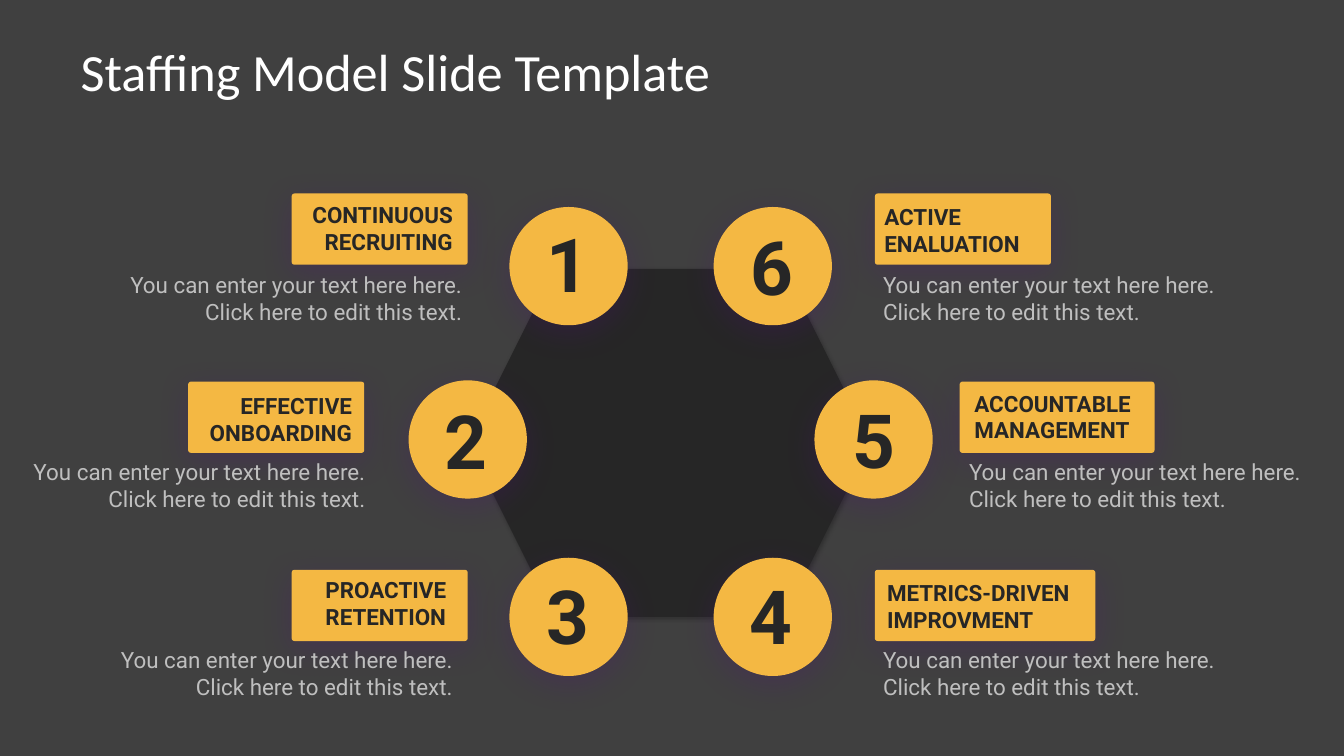
from lxml import etree
from pptx import Presentation
from pptx import util as u
from pptx.dml.color import RGBColor
from pptx.enum import shapes, text
from pptx.oxml.ns import qn

Inches = u.Inches
COLORS = {"background": "404040", "amber": "F4B843", "dark": "262626", "white": "FFFFFF",
          "grey": "BFBFBF", "glow": "550D7F", "black": "000000"}
LEFT, CENTER, RIGHT = text.PP_ALIGN.LEFT, text.PP_ALIGN.CENTER, text.PP_ALIGN.RIGHT
DETAIL = "You can enter your text here here. Click here to edit this text."

prs = Presentation()
prs.slide_width, prs.slide_height = Inches(10), Inches(10 * 9 / 16)
slide = prs.slides.add_slide(prs.slide_layouts[5])
slide.background.fill.solid()
slide.background.fill.fore_color.rgb = RGBColor.from_string(COLORS["background"])


def add_part(kind, box, color, glow, blur, distance, angle):
    part = slide.shapes.add_shape(kind, *[Inches(v) for v in box])
    part.fill.solid()
    part.fill.fore_color.rgb = RGBColor.from_string(COLORS[color])
    part.line.fill.background()
    part.shadow.inherit = False
    effects = part._element.spPr.find(qn("a:effectLst"))
    shadow = etree.SubElement(effects, qn("a:outerShdw"), blurRad=str(u.Pt(blur)),
                              dist=str(u.Pt(distance)), dir=str(angle * 60000),
                              algn="t", rotWithShape="0")
    tint = etree.SubElement(shadow, qn("a:srgbClr"), val=COLORS[glow])
    etree.SubElement(tint, qn("a:alpha"), val="23000")
    return part


def add_text(words, box, size, color, align, bold=False):
    frame = slide.shapes.add_textbox(*[Inches(v) for v in box]).text_frame
    frame.word_wrap = True
    frame.auto_size = text.MSO_AUTO_SIZE.SHAPE_TO_FIT_TEXT
    frame.margin_left = frame.margin_right = frame.margin_top = frame.margin_bottom = 0
    paragraph = frame.paragraphs[0]
    paragraph.alignment = align
    run = paragraph.add_run()
    run.text = words
    run.font.name, run.font.size, run.font.bold = "Roboto", u.Pt(size), bold
    run.font.color.rgb = RGBColor.from_string(COLORS[color])


title = slide.shapes.title
title.left, title.top, title.width, title.height = [Inches(v) for v in (0.5, 0.23, 9, 0.59)]
title.text_frame.auto_size = text.MSO_AUTO_SIZE.NONE
title.text_frame.vertical_anchor = text.MSO_ANCHOR.MIDDLE
heading = title.text_frame.paragraphs[0]
heading.alignment = LEFT
heading_run = heading.add_run()
heading_run.text = "Staffing Model Slide Template"
heading_run.font.name, heading_run.font.size = "Calibri", u.Pt(28)
heading_run.font.color.rgb = RGBColor.from_string(COLORS["white"])

tag_tops = (1.44, 2.84, 4.24)
detail_tops = (2.02, 3.41, 4.81)
disc_tops = (1.54, 2.83, 4.15)

steps = [
    ("1", 0, RIGHT, (2.17, 1.31), "CONTINUOUS RECRUITING", (2.06, 1.5, 1.31), 0.95, 3.79, (3.98, 1.62)),
    ("2", 1, RIGHT, (1.4, 1.31), "EFFECTIVE ONBOARDING", (1.31, 2.92, 1.31), 0.23, 3.04, (3.22, 2.94)),
    ("3", 2, RIGHT, (2.17, 1.31), "PROACTIVE RETENTION", (2.01, 4.29, 1.31), 0.88, 3.79, (3.98, 4.24)),
    ("6", 0, LEFT, (6.51, 1.31), "ACTIVE ENALUATION", (6.58, 1.51, 1.31), 6.57, 5.31, (5.5, 1.64)),
    ("5", 1, LEFT, (7.14, 1.45), "ACCOUNTABLE MANAGEMENT", (7.25, 2.9, 1.31), 7.21, 6.06, (6.26, 2.93)),
    ("4", 2, LEFT, (6.51, 1.64), "METRICS-DRIVEN IMPROVMENT", (6.6, 4.31, 1.59), 6.57, 5.31, (5.49, 4.24)),
]

add_part(shapes.MSO_SHAPE.HEXAGON, (3.48, 2, 3, 2.59), "dark", "black", 2, 1, 70)

for number, row, align, (tag_x, tag_w), label, (label_x, label_y, label_w), detail_x, disc_x, digit in steps:
    tag = add_part(shapes.MSO_SHAPE.ROUNDED_RECTANGLE, (tag_x, tag_tops[row], tag_w, 0.53),
                   "amber", "glow", 17, 4, 90)
    tag.adjustments[0] = 0.04
    add_part(shapes.MSO_SHAPE.OVAL, (disc_x, disc_tops[row], 0.88, 0.88), "amber", "glow", 17, 4, 90)
    add_text(label, (label_x, label_y, label_w, 0.4), 12, "dark", align, True)
    add_text(DETAIL, (detail_x, detail_tops[row], 2.49, 0.4), 12, "grey", align)
    add_text(number, (*digit, 0.49, 0.67), 40, "dark", CENTER, True)

prs.save("out.pptx")
